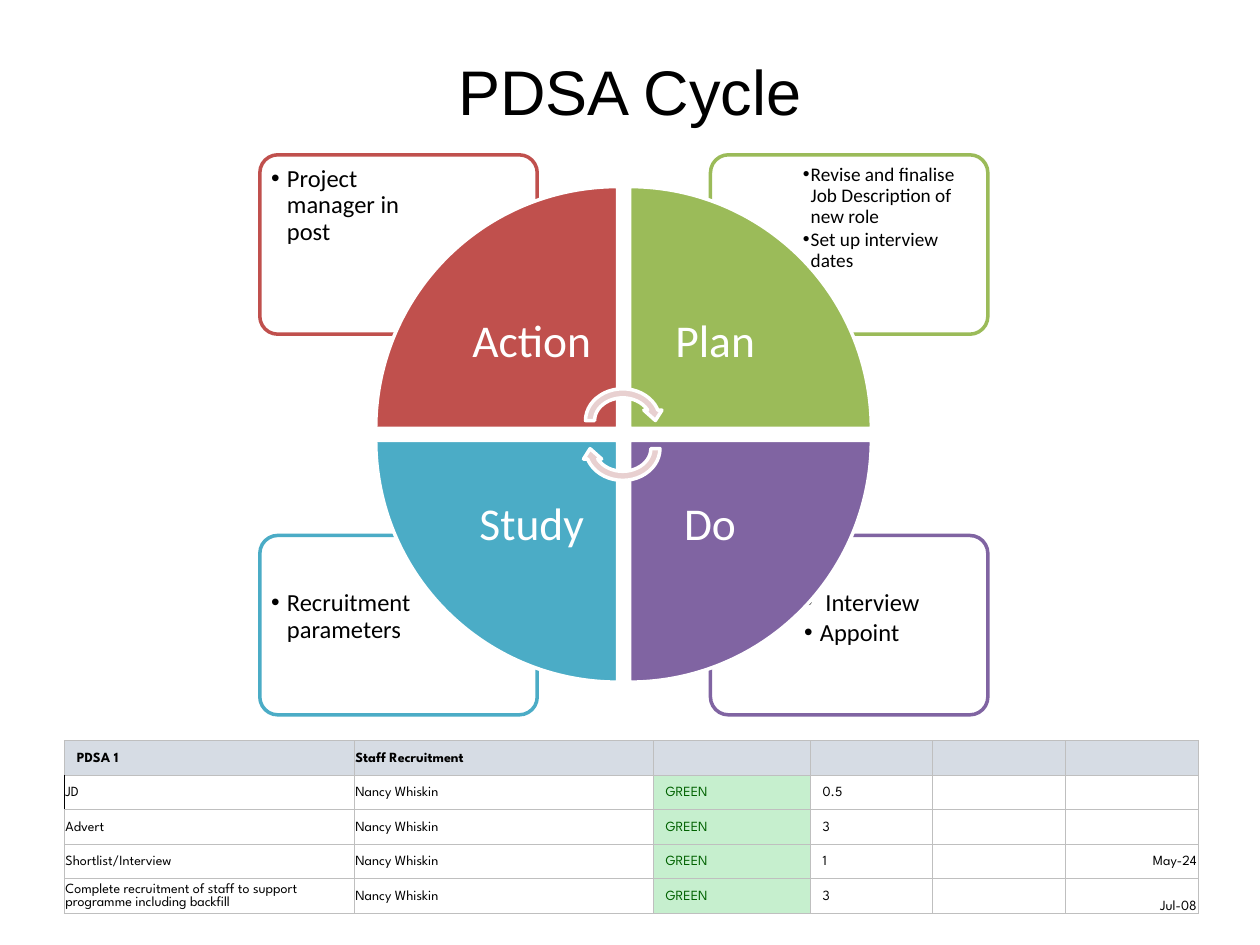
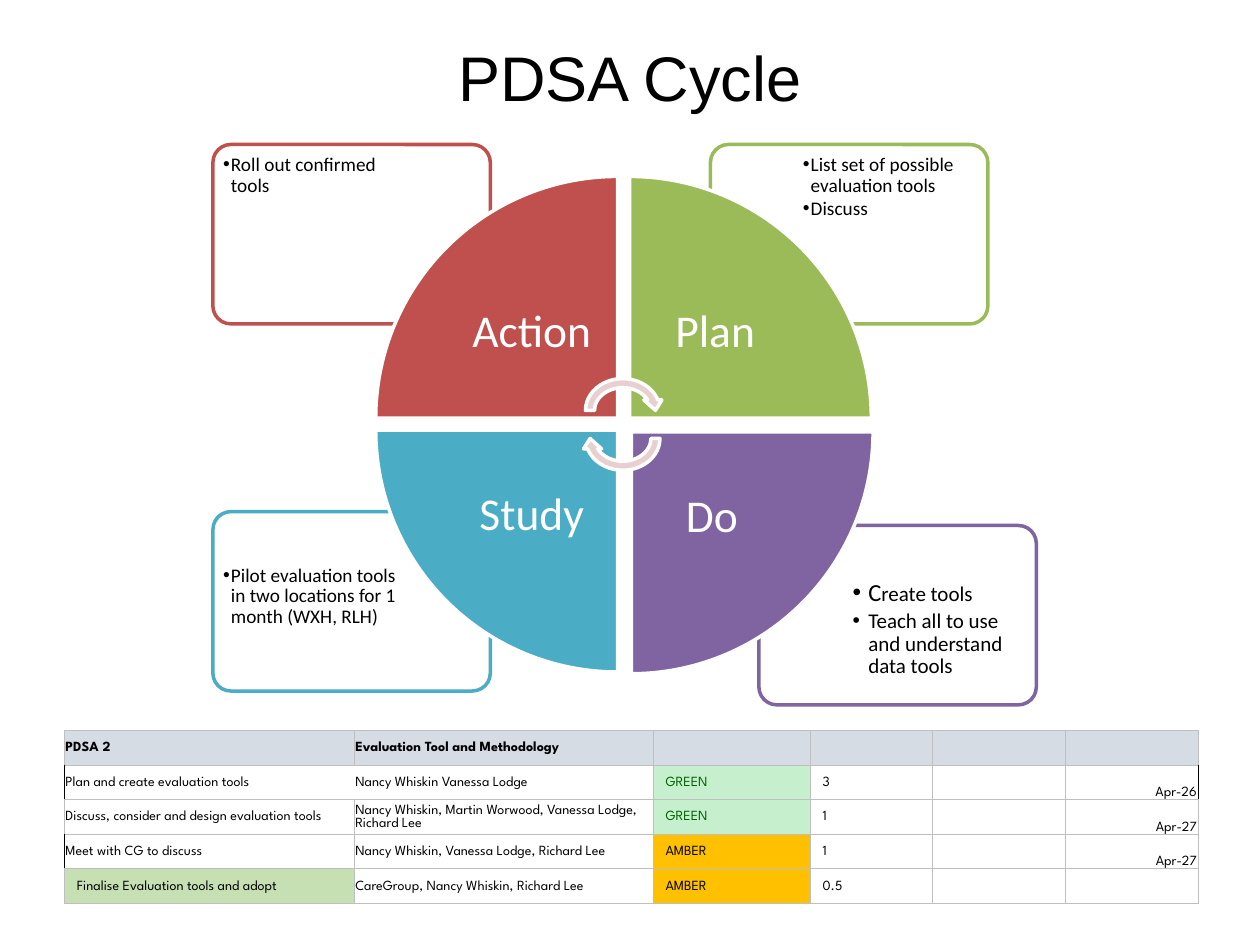
from lxml.etree import SubElement
from pptx import Presentation
from pptx.dml.color import RGBColor
from pptx.enum.shapes import MSO_SHAPE
from pptx.enum.text import MSO_ANCHOR, PP_ALIGN
from pptx.oxml.ns import qn
from pptx.util import Pt

CARD, WEDGE, ARROW = (MSO_SHAPE.ROUNDED_RECTANGLE, MSO_SHAPE.PIE_WEDGE,
                      MSO_SHAPE.CIRCULAR_ARROW)
TOP, MIDDLE, BOTTOM = MSO_ANCHOR.TOP, MSO_ANCHOR.MIDDLE, MSO_ANCHOR.BOTTOM
LEFT, CENTER, RIGHT = PP_ALIGN.LEFT, PP_ALIGN.CENTER, PP_ALIGN.RIGHT

BLACK = RGBColor(0x00, 0x00, 0x00)
WHITE = RGBColor(0xFF, 0xFF, 0xFF)
RED = RGBColor(0xC0, 0x50, 0x4D)
LIME = RGBColor(0x9B, 0xBB, 0x59)
PURPLE = RGBColor(0x80, 0x64, 0xA2)
TEAL = RGBColor(0x4B, 0xAC, 0xC6)
PINK = RGBColor(0xE8, 0xD0, 0xD0)
GREY = RGBColor(0xBF, 0xBF, 0xBF)
HEAD = RGBColor(0xD6, 0xDC, 0xE4)
FOREST = RGBColor(0x00, 0x61, 0x00)
MINT = RGBColor(0xC6, 0xEF, 0xCE)
AMBER = RGBColor(0xFF, 0xC0, 0x00)
SAGE = RGBColor(0xC6, 0xE0, 0xB4)

TITLE_FONT, BODY_FONT, TABLE_FONT = "Arial", "Calibri", "League Spartan"

# name, colour, column, row; clockwise from top left
STAGES = [
    ("Action", RED, 0, 0),
    ("Plan", LIME, 1, 0),
    ("Do ", PURPLE, 1, 1),
    ("Study", TEAL, 0, 1),
]
STATUS = {"GREEN": (MINT, FOREST), "AMBER": (AMBER, BLACK)}

# Cards: left, top, text size, bullets; a tuple bullet lists (text, size) runs.
# Cell settings are keyed by (row, column), edges by (row, column, side).
SLIDES = [
    {
        "title": (15, 73.5),
        "wheel": 106.6,
        "nudge": (0, 0),
        "cards": [
            (148.5, 88.5, 14, ["Project manager in post"]),
            (406, 88.5, 11, ["Revise and finalise Job Description of new role",
                             "Set up interview dates"]),
            (406, 306, 14, [" Interview", "Appoint"]),
            (148.5, 306, 14, ["Recruitment parameters"]),
        ],
        "table": 423.3,
        "rows": [
            ("PDSA 1", "Staff Recruitment", "", "", "", ""),
            ("JD", "Nancy Whiskin", "GREEN", "0.5", "", ""),
            ("Advert", "Nancy Whiskin", "GREEN", "3", "", ""),
            ("Shortlist/Interview", "Nancy Whiskin", "GREEN", "1", "", "May-24"),
            ("Complete recruitment of staff to support programme including backfill",
             "Nancy Whiskin", "GREEN", "3", "", "Jul-08"),
        ],
        "indent": (0, 0),
        "fills": {},
        "low": [4],
        "edges": {(1, 0, "L"): BLACK},
    },
    {
        "title": (21, 45),
        "wheel": 100.8,
        "nudge": (1, 1),
        "cards": [
            (121.7, 82.6, 11, ["Roll out confirmed tools"]),
            (406, 82.6, 11, ["List set of possible evaluation tools", "Discuss"]),
            (433.7, 300.3, 12, [(("C", 14), ("reate tools", 12)),
                                "Teach all to use and understand data tools"]),
            (121.7, 292.4, 11,
             ["Pilot evaluation tools in two locations for 1 month (WXH, RLH)"]),
        ],
        "table": 417.4,
        "rows": [
            ("PDSA 2", "Evaluation Tool and Methodology", "", "", "", ""),
            ("Plan and create evaluation tools", "Nancy Whiskin Vanessa Lodge",
             "GREEN", "3", "", "Apr-26"),
            ("Discuss, consider and design evaluation tools",
             "Nancy Whiskin, Martin Worwood, Vanessa Lodge, Richard Lee",
             "GREEN", "1", "", "Apr-27"),
            ("Meet with CG to discuss", "Nancy Whiskin, Vanessa Lodge, Richard Lee",
             "AMBER", "1", "", "Apr-27"),
            ("Finalise Evaluation tools and adopt",
             "CareGroup, Nancy Whiskin, Richard Lee", "AMBER", "0.5", "", ""),
        ],
        "indent": (4, 0),
        "fills": {(4, 0): SAGE},
        "low": [1, 2, 3],
        "edges": {(1, 0, "L"): BLACK, (3, 0, "L"): BLACK, (1, 5, "R"): BLACK,
                  (1, 0, "R"): None, (1, 1, "L"): None},
    },
]

CARD_W, CARD_H, FAR, DROP = 158.5, 102.5, 47, 25
WHEEL_X, SIDE, STEP, LABEL = 214.7, 138.2, 145, 98
COLS, ROW_H = (165.6, 170.9, 89.7, 69.8, 76, 76), 19.73


def style(font, face, size, color, bold=False):
    font.name, font.size, font.bold = face, Pt(size), bold
    font.color.rgb = color


def set_pads(box, left, top, right, bottom):
    """Set the inner margins of a text frame or a table cell."""
    box.margin_left, box.margin_top = Pt(left), Pt(top)
    box.margin_right, box.margin_bottom = Pt(right), Pt(bottom)


def add_shape(slide, kind, box, fill, line, turn=0):
    shape = slide.shapes.add_shape(kind, *map(Pt, box))
    shape.shadow.inherit = False
    shape.fill.solid()
    shape.fill.fore_color.rgb = fill
    shape.line.color.rgb = line
    shape.line.width = Pt(2)
    shape.rotation = turn
    return shape


def add_bullet(para, indent):
    props = para._p.get_or_add_pPr()
    props.set("marL", str(Pt(indent)))
    props.set("indent", str(-Pt(indent)))
    SubElement(props, qn("a:buFont")).set("typeface", "Arial")
    SubElement(props, qn("a:buChar")).set("char", "•")


def add_title(slide, top, height):
    title = slide.shapes.title
    title.left, title.top, title.width, title.height = map(Pt, (54, top, 612, height))
    frame = title.text_frame
    frame.text = "PDSA Cycle"
    frame.vertical_anchor = MIDDLE
    para = frame.paragraphs[0]
    para.alignment = CENTER
    style(para.runs[0].font, TITLE_FONT, 36, BLACK)


def add_card(slide, stage, card):
    _, color, col, row = stage
    left, top, size, items = card
    shape = add_shape(slide, CARD, (left, top, CARD_W, CARD_H), WHITE, color)
    shape.adjustments[0] = 0.1
    pad, indent = (2.8, 4.5) if size < 12 else (3.5, 9)
    frame = shape.text_frame
    frame.word_wrap = True
    frame.vertical_anchor = TOP
    set_pads(frame, pad + FAR * col, pad + DROP * row, pad + FAR * (1 - col), pad)
    for i, item in enumerate(items):
        para = frame.add_paragraph() if i else frame.paragraphs[0]
        add_bullet(para, indent)
        para.alignment = LEFT
        para.line_spacing = 0.9
        para.space_after = Pt(round(size * 0.15, 1))
        for text, points in ((item, size),) if isinstance(item, str) else item:
            run = para.add_run()
            run.text = text
            style(run.font, BODY_FONT, points, BLACK)


def add_wheel(slide, top, nudge):
    for i, (name, color, col, row) in enumerate(STAGES):
        x, y = WHEEL_X + STEP * col, top + STEP * row
        if col and row:
            x, y = x + nudge[0], y + nudge[1]
        add_shape(slide, WEDGE, (x, y, SIDE, SIDE), color, WHITE, 90 * i)
        inset = SIDE - LABEL
        box = slide.shapes.add_textbox(Pt(x + inset * (1 - col)),
                                       Pt(y + inset * (1 - row)),
                                       Pt(LABEL), Pt(LABEL))
        frame = box.text_frame
        frame.text = name
        frame.word_wrap = True
        frame.vertical_anchor = MIDDLE
        set_pads(frame, 7, 7, 7, 7)
        para = frame.paragraphs[0]
        para.alignment = CENTER
        para.line_spacing = 0.9
        style(para.runs[0].font, BODY_FONT, 26, WHITE)
    for i in range(2):
        add_shape(slide, ARROW, (332, top + 113 + 16 * i, 47.7, 41.5),
                  PINK, WHITE, 180 * i)


def add_edge(cell, side, color):
    line = SubElement(cell._tc.get_or_add_tcPr(), qn("a:ln" + side), w=str(Pt(0.5)))
    if color is None:
        SubElement(line, qn("a:noFill"))
    else:
        fill = SubElement(line, qn("a:solidFill"))
        SubElement(fill, qn("a:srgbClr")).set("val", str(color))


def fill_cell(cell, r, c, text, data):
    for side in "LRTB":
        add_edge(cell, side, data["edges"].get((r, c, side), GREY))
    fill, ink = STATUS.get(text, (data["fills"].get((r, c)), BLACK))
    if r == 0:
        fill = HEAD
    if fill is None:
        cell.fill.background()
    else:
        cell.fill.solid()
        cell.fill.fore_color.rgb = fill
    wide = c in (2, 3) or (r, c) == data["indent"]
    set_pads(cell, 7.2 if wide else 0.72, 0.72, 0.72, 0)
    cell.vertical_anchor = BOTTOM if c == 5 and r in data["low"] else MIDDLE
    para = cell.text_frame.paragraphs[0]
    para.alignment = RIGHT if c == 5 else LEFT
    if text:
        para.text = text
        style(para.runs[0].font, TABLE_FONT, 8, ink, r == 0)
    else:
        SubElement(para._p, qn("a:endParaRPr")).set("sz", "800")


def add_grid(slide, data):
    rows = data["rows"]
    table = slide.shapes.add_table(len(rows), len(COLS), Pt(36.7), Pt(data["table"]),
                                   Pt(sum(COLS)), Pt(ROW_H * len(rows))).table
    table.first_row = table.horz_banding = False
    for col, width in zip(table.columns, COLS):
        col.width = Pt(width)
    for r, row in enumerate(rows):
        table.rows[r].height = Pt(ROW_H)
        for c, text in enumerate(row):
            fill_cell(table.cell(r, c), r, c, text, data)


def main():
    deck = Presentation()
    deck.slide_width, deck.slide_height = Pt(720), Pt(540)
    for data in SLIDES:
        slide = deck.slides.add_slide(deck.slide_layouts[5])
        add_title(slide, *data["title"])
        for stage, card in zip(STAGES, data["cards"]):
            add_card(slide, stage, card)
        add_wheel(slide, data["wheel"], data["nudge"])
        add_grid(slide, data)
    deck.save("out.pptx")


if __name__ == "__main__":
    main()
